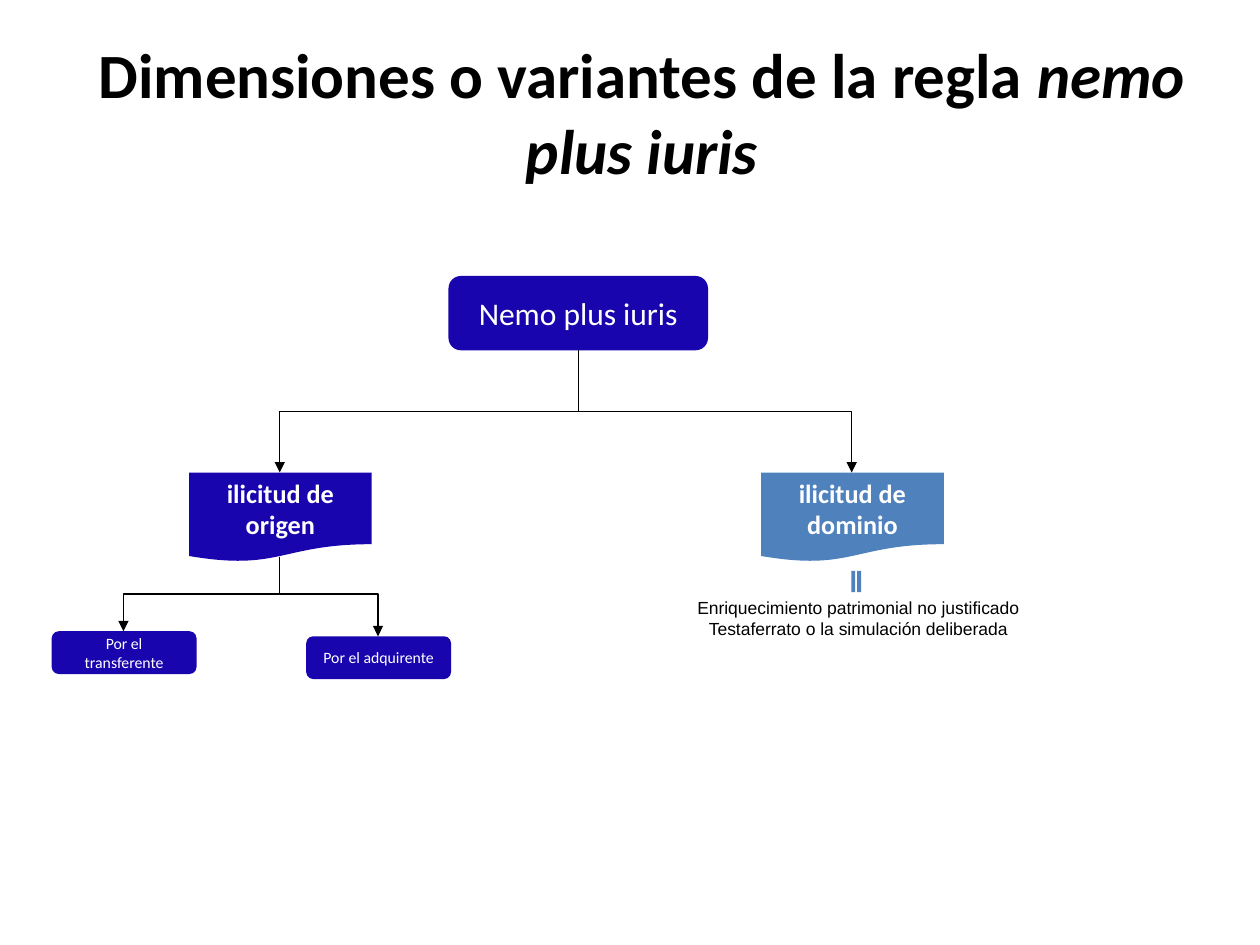
from dataclasses import dataclass

from lxml.etree import SubElement
from pptx import Presentation
from pptx.dml.color import RGBColor
from pptx.enum.shapes import MSO_CONNECTOR, MSO_SHAPE
from pptx.enum.text import MSO_ANCHOR, MSO_AUTO_SIZE, PP_ALIGN
from pptx.oxml.ns import qn
from pptx.util import Inches, Pt

NAVY, BLUE, WHITE, BLACK = "1905AD", "4F81BD", "FFFFFF", "000000"
ROOT = MSO_SHAPE.ROUNDED_RECTANGLE
KIND = MSO_SHAPE.FLOWCHART_DOCUMENT
CASE = MSO_SHAPE.FLOWCHART_ALTERNATE_PROCESS


@dataclass
class Node:
    """A filled chart box with its label and place in inches."""

    text: str
    outline: MSO_SHAPE
    left: float
    top: float
    width: float
    height: float
    size: float = 18
    bold: bool = False
    fill: str = NAVY


@dataclass
class Branch:
    """An elbow arrow from the foot of one node to the top of another."""

    parent: str
    child: str
    start: tuple[float, float]
    end: tuple[float, float]
    bend: float = 0.5


NODES = {
    "rule": Node("Nemo plus iuris", ROOT, 3.56, 2.19, 2.06, 0.59),
    "origin": Node("ilicitud de origen", KIND, 1.5, 3.75, 1.45, 0.71, 15, True),
    "domain": Node("ilicitud de dominio", KIND, 6.04, 3.75, 1.45, 0.71, 15, True, BLUE),
    "giver": Node("Por el transferente", CASE, 0.41, 5.01, 1.15, 0.34, 9),
    "taker": Node("Por el adquirente", CASE, 2.43, 5.05, 1.15, 0.34, 9),
}
BRANCHES = [
    Branch("rule", "origin", (4.59, 2.78), (2.22, 3.75)),
    Branch("rule", "domain", (4.59, 2.78), (6.76, 3.75)),
    Branch("origin", "giver", (2.22, 4.42), (0.98, 5.01)),
    Branch("origin", "taker", (2.22, 4.42), (3, 5.05), 0.47),
]


def color(code: str) -> RGBColor:
    """Turn a hex string into a colour."""
    return RGBColor.from_string(code)


def write(para, text: str, *, size: float, ink: str = BLACK, font: str = "Calibri",
          bold: bool = False, italic: bool = False) -> None:
    """Add a formatted span to a centred paragraph."""
    para.alignment = PP_ALIGN.CENTER
    span = para.add_run()
    span.text = text
    span.font.name = font
    span.font.size = Pt(size)
    span.font.bold = bold
    span.font.italic = italic
    span.font.color.rgb = color(ink)


def draw_shape(page, outline: MSO_SHAPE, place: tuple[float, ...], fill: str):
    """Draw a flat preset shape without an outline."""
    box = page.shapes.add_shape(outline, *map(Inches, place))
    box.shadow.inherit = False
    box.fill.solid()
    box.fill.fore_color.rgb = color(fill)
    box.line.fill.background()
    return box


def draw_node(page, node: Node):
    """Draw a chart box with its label."""
    place = (node.left, node.top, node.width, node.height)
    box = draw_shape(page, node.outline, place, node.fill)
    frame = box.text_frame
    frame.word_wrap = True
    frame.vertical_anchor = MSO_ANCHOR.MIDDLE
    write(frame.paragraphs[0], node.text, size=node.size, ink=WHITE, bold=node.bold)
    return box


def draw_branch(page, branch: Branch, boxes: dict) -> None:
    """Draw an elbow arrow that leaves downwards, turned a quarter from its frame."""
    (x1, y1), (x2, y2) = branch.start, branch.end
    rise, run = y2 - y1, abs(x2 - x1)
    link = page.shapes.add_connector(MSO_CONNECTOR.ELBOW, 0, 0, 0, 0)
    link.begin_connect(boxes[branch.parent], 2)
    link.end_connect(boxes[branch.child], 0)
    link.left = Inches((x1 + x2 - rise) / 2)
    link.top = Inches((y1 + y2 - run) / 2)
    link.width, link.height = Inches(rise), Inches(run)
    link.line.color.rgb = color(BLACK)
    link.line.width = Pt(0.75)
    properties = link._element.spPr
    frame = properties.find(qn("a:xfrm"))
    rightward = x2 > x1
    frame.set("rot", str((270 if rightward else 90) * 60000))
    frame.set("flipH", str(int(rightward)))
    frame.set("flipV", "0")
    values = properties.find(qn("a:prstGeom")).find(qn("a:avLst"))
    SubElement(values, qn("a:gd"), name="adj1", fmla=f"val {round(branch.bend * 100000)}")
    SubElement(properties.find(qn("a:ln")), qn("a:tailEnd"), type="triangle")
    SubElement(properties, qn("a:effectLst"))


def draw_title(page) -> None:
    """Write the heading with its Latin phrase in italics."""
    box = page.shapes.add_textbox(Inches(0.41), Inches(0.59), Inches(9.37), Inches(0.59))
    frame = box.text_frame
    frame.word_wrap = True
    frame.vertical_anchor = MSO_ANCHOR.MIDDLE
    para = frame.paragraphs[0]
    write(para, "Dimensiones o variantes de la regla ", size=36, bold=True)
    write(para, "nemo plus iuris", size=36, bold=True, italic=True)


def draw_examples(page) -> None:
    """List the cases that equal unlawful ownership."""
    box = page.shapes.add_textbox(Inches(5.42), Inches(4.69), Inches(2.78), Inches(0.44))
    frame = box.text_frame
    frame.word_wrap = False
    frame.auto_size = MSO_AUTO_SIZE.SHAPE_TO_FIT_TEXT
    write(frame.paragraphs[0], "Enriquecimiento patrimonial no justificado",
          size=10, font="Arial")
    write(frame.add_paragraph(), "Testaferrato o la simulación deliberada",
          size=10, font="Arial")
    sign = draw_shape(page, MSO_SHAPE.MATH_EQUAL, (6.68, 4.55, 0.23, 0.13), BLUE)
    sign.rotation = 90


def main() -> None:
    """Build the slide and save the deck."""
    deck = Presentation()
    deck.slide_width, deck.slide_height = Inches(10), Inches(7.5)
    page = deck.slides.add_slide(deck.slide_layouts[6])
    draw_title(page)
    boxes = {name: draw_node(page, node) for name, node in NODES.items()}
    for branch in BRANCHES:
        draw_branch(page, branch, boxes)
    draw_examples(page)
    deck.save("out.pptx")


if __name__ == "__main__":
    main()
